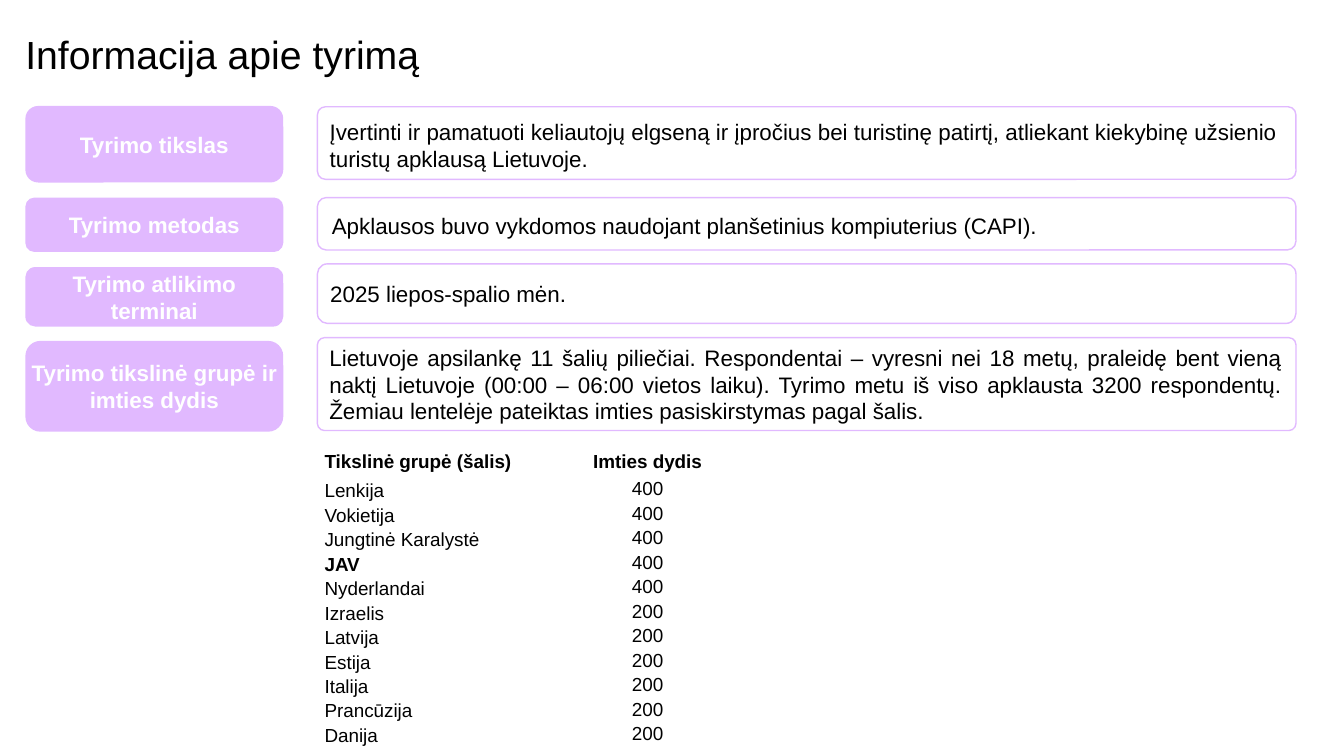
"""Build the slide that describes the aim, method, dates and sample of the survey."""
from dataclasses import dataclass

from pptx import Presentation
from pptx.dml.color import RGBColor
from pptx.enum.shapes import MSO_SHAPE
from pptx.enum.text import MSO_ANCHOR, PP_ALIGN
from pptx.shapes.autoshape import Shape
from pptx.slide import Slide
from pptx.text.text import TextFrame, _Paragraph
from pptx.util import Cm, Pt

LILAC = RGBColor(0xE1, 0xB9, 0xFF)
WHITE = RGBColor(0xFF, 0xFF, 0xFF)
BLACK = RGBColor(0x00, 0x00, 0x00)
FONT = "Arial"

LABEL_LEFT, LABEL_WIDTH = 0.64, 6.5
DETAIL_LEFT, DETAIL_WIDTH = 8.0, 24.66
NO_MARGINS = (0, 0, 0, 0)


@dataclass(frozen=True)
class Box:
    """A rounded box with lengths in centimetres and margins as left, top, right, bottom."""
    text: str
    top: float
    height: float
    corner: float = 0.167
    margins: tuple[float, float, float, float] = NO_MARGINS


@dataclass(frozen=True)
class Country:
    """A surveyed country and its sample size."""
    name: str
    sample: int
    bold: bool = False


TOPICS = [
    (Box("Tyrimo tikslas", 2.67, 1.93),
     Box("Įvertinti ir pamatuoti keliautojų elgseną ir įpročius bei turistinę patirtį, "
         "atliekant kiekybinę užsienio turistų apklausą Lietuvoje.",
         2.69, 1.83, 0.111, (0.25, 0.3, 0.41, 0.2))),
    (Box("Tyrimo metodas", 4.98, 1.37),
     Box("Apklausos buvo vykdomos naudojant planšetinius kompiuterius (CAPI).",
         4.98, 1.32, margins=(0.3, 0.3, 0.41, 0.2))),
    (Box("Tyrimo atlikimo terminai", 6.73, 1.5),
     Box("2025 liepos-spalio mėn.", 6.65, 1.5, margins=(0.25, 0, 0, 0))),
    (Box("Tyrimo tikslinė grupė ir imties dydis", 8.59, 2.29),
     Box("Lietuvoje apsilankę 11 šalių piliečiai. Respondentai – vyresni nei 18 metų, "
         "praleidę bent vieną naktį Lietuvoje (00:00 – 06:00 vietos laiku). Tyrimo metu "
         "iš viso apklausta 3200 respondentų. Žemiau lentelėje pateiktas imties "
         "pasiskirstymas pagal šalis.",
         8.51, 2.34, 0.076, (0.25, 0, 0.3, 0))),
]

HEADINGS = ("Tikslinė grupė (šalis)", "Imties dydis")
COUNTRIES = [
    Country("Lenkija", 400),
    Country("Vokietija", 400),
    Country("Jungtinė Karalystė", 400),
    Country("JAV", 400, bold=True),
    Country("Nyderlandai", 400),
    Country("Izraelis", 200),
    Country("Latvija", 200),
    Country("Estija", 200),
    Country("Italija", 200),
    Country("Prancūzija", 200),
    Country("Danija", 200),
]


def write(text_frame: TextFrame, text: str, size: float, color: RGBColor = BLACK,
          bold: bool = False, alignment: PP_ALIGN = PP_ALIGN.LEFT) -> _Paragraph:
    """Write one run into the first paragraph of a text frame."""
    paragraph = text_frame.paragraphs[0]
    paragraph.alignment = alignment
    run = paragraph.add_run()
    run.text = text
    run.font.name = FONT
    run.font.size = Pt(size)
    run.font.bold = bold
    run.font.color.rgb = color
    return paragraph


def set_margins(text_frame: TextFrame, margins: tuple[float, float, float, float]) -> None:
    """Set the four inner margins of a text frame and let its text wrap."""
    text_frame.word_wrap = True
    (text_frame.margin_left, text_frame.margin_top,
     text_frame.margin_right, text_frame.margin_bottom) = map(Cm, margins)


def add_box(slide: Slide, box: Box, left: float, width: float, fill: RGBColor) -> Shape:
    """Add a filled rounded rectangle without its text."""
    shape = slide.shapes.add_shape(MSO_SHAPE.ROUNDED_RECTANGLE, Cm(left), Cm(box.top),
                                   Cm(width), Cm(box.height))
    shape.shadow.inherit = False
    shape.adjustments[0] = box.corner
    shape.fill.solid()
    shape.fill.fore_color.rgb = fill
    set_margins(shape.text_frame, box.margins)
    shape.text_frame.vertical_anchor = MSO_ANCHOR.MIDDLE
    return shape


def add_label(slide: Slide, box: Box) -> None:
    """Add a lilac topic label."""
    shape = add_box(slide, box, LABEL_LEFT, LABEL_WIDTH, LILAC)
    shape.line.fill.background()
    write(shape.text_frame, box.text, 16, WHITE, True, PP_ALIGN.CENTER)


def add_detail(slide: Slide, box: Box) -> None:
    """Add an outlined box that explains a topic."""
    shape = add_box(slide, box, DETAIL_LEFT, DETAIL_WIDTH, WHITE)
    shape.line.color.rgb = LILAC
    shape.line.width = Pt(1)
    write(shape.text_frame, box.text, 16, alignment=PP_ALIGN.JUSTIFY)


def add_title(slide: Slide, text: str) -> None:
    """Add the slide title."""
    shape = slide.shapes.add_textbox(Cm(LABEL_LEFT), Cm(0.89), Cm(15.9), Cm(1.02))
    set_margins(shape.text_frame, NO_MARGINS)
    write(shape.text_frame, text, 28).line_spacing = 0.9


def add_sample_table(slide: Slide) -> None:
    """Add the table of sample sizes by country."""
    rows = [(*HEADINGS, True, True)]
    rows += [(country.name, str(country.sample), country.bold, False) for country in COUNTRIES]
    header_height, row_height = Cm(0.69), Cm(0.38)
    table = slide.shapes.add_table(
        len(rows), len(HEADINGS), Cm(DETAIL_LEFT), Cm(11.38), Cm(11.15),
        header_height + row_height * len(COUNTRIES)).table
    table.first_row = False
    table.horz_banding = False
    table.columns[0].width = Cm(5.49)
    table.columns[1].width = Cm(5.66)
    for index, (name, sample, name_bold, sample_bold) in enumerate(rows):
        table.rows[index].height = row_height if index else header_height
        name_cell, sample_cell = table.cell(index, 0), table.cell(index, 1)
        for cell in (name_cell, sample_cell):
            cell.fill.background()
            cell.margin_left = cell.margin_right = Cm(0.18)
            cell.margin_top = cell.margin_bottom = 0
        paragraph = write(name_cell.text_frame, name, 13.5, bold=name_bold)
        if index:
            paragraph.line_spacing = 1.08
        write(sample_cell.text_frame, sample, 13.5, bold=sample_bold,
              alignment=PP_ALIGN.CENTER)


def main() -> None:
    """Build and save the presentation."""
    presentation = Presentation()
    presentation.slide_width = Cm(33.87)
    presentation.slide_height = Cm(19.05)
    slide = presentation.slides.add_slide(presentation.slide_layouts[6])
    add_title(slide, "Informacija apie tyrimą")
    for label, detail in TOPICS:
        add_label(slide, label)
        add_detail(slide, detail)
    add_sample_table(slide)
    presentation.save("out.pptx")


if __name__ == "__main__":
    main()
